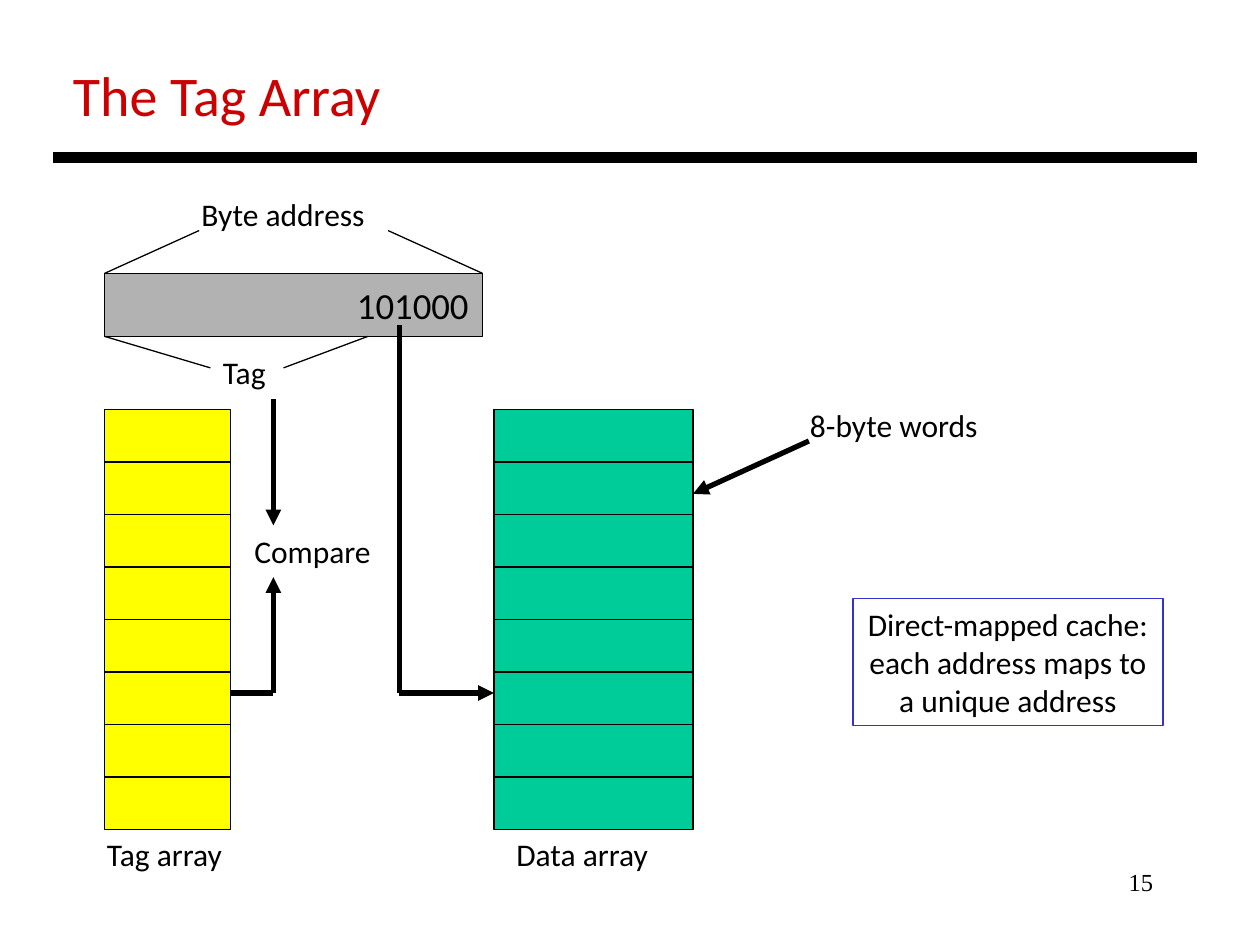
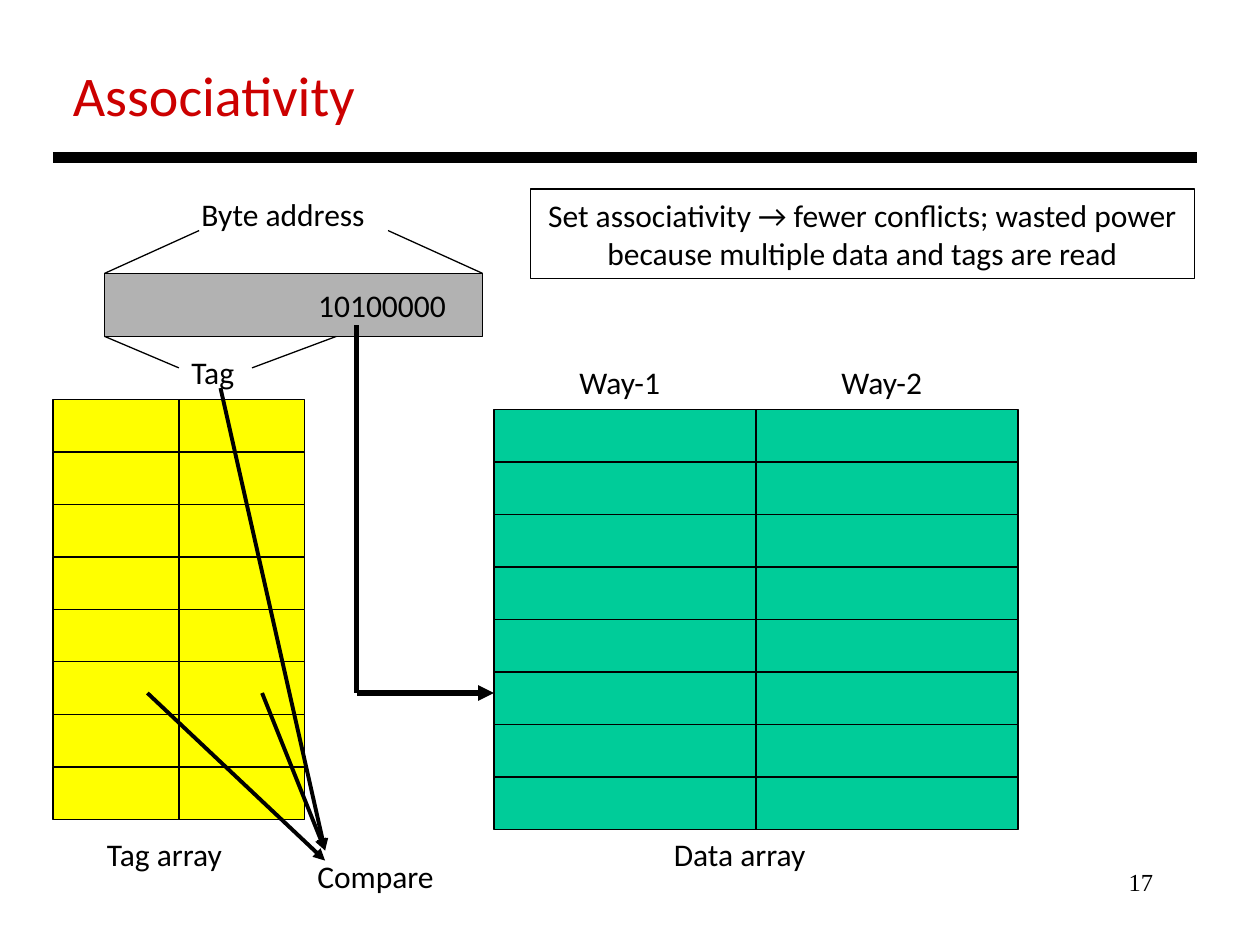
"""Build two slides on the tag array and associativity of a cache."""
import lxml.etree
import pptx
import pptx.dml.color
import pptx.enum.shapes
import pptx.enum.text
import pptx.oxml.ns
import pptx.util

Inches = pptx.util.Inches
Pt = pptx.util.Pt
Align = pptx.enum.text.PP_ALIGN
Fit = pptx.enum.text.MSO_AUTO_SIZE

BLACK, RED, BLUE = "000000", "CC0000", "3333CC"
GREEN, YELLOW, GREY = "00CC99", "FFFF00", "B2B2B2"
THIN, MEDIUM, THICK, RULE = 0.75, 2.25, 3, 6
ROWS, ROW_HEIGHT = 8, 5 / 12
DATA_LEFT, DATA_TOP = 3.92, 3.25
LOOKUP_Y = 5.5

TITLE_FONT = {"name": "Calibri", "size": Pt(32)}
LABEL_FONT = {"name": "Calibri", "size": Pt(18)}
ADDRESS_FONT = {"name": "Calibri", "size": Pt(21)}
NUMBER_FONT = {"name": "Times New Roman", "size": Pt(14)}
LABEL_FRAME = {"word_wrap": False, "auto_size": Fit.SHAPE_TO_FIT_TEXT}
WRAPPED_FRAME = {"word_wrap": True, "auto_size": Fit.NONE}


def rgb(hex_code):
    """Turn a hex string into a colour."""
    return pptx.dml.color.RGBColor.from_string(hex_code)


def set_all(target, values):
    """Set every attribute named in a dict of format values."""
    for name, value in values.items():
        setattr(target, name, value)


def write(box, text, font, color=BLACK, align=Align.LEFT, frame=LABEL_FRAME):
    """Write one paragraph per line of text into a box."""
    set_all(box.text_frame, frame)
    for index, line in enumerate(text.split("\n")):
        para = box.text_frame.paragraphs[0] if index == 0 else box.text_frame.add_paragraph()
        para.alignment = align
        span = para.add_run()
        span.text = line
        set_all(span.font, font)
        span.font.color.rgb = rgb(color)


def add_label(page, text, left, top, width, height=0.4, font=LABEL_FONT, **style):
    """Add a plain piece of text."""
    box = page.shapes.add_textbox(*map(Inches, (left, top, width, height)))
    write(box, text, font, **style)


def add_box(page, left, top, width, height, fill=None, outline=BLACK):
    """Add an outlined rectangle, filled when a colour is given."""
    box = page.shapes.add_shape(
        pptx.enum.shapes.MSO_SHAPE.RECTANGLE, *map(Inches, (left, top, width, height)))
    box.shadow.inherit = False
    if fill:
        box.fill.solid()
        box.fill.fore_color.rgb = rgb(fill)
    else:
        box.fill.background()
    box.line.color.rgb = rgb(outline)
    box.line.width = Pt(THIN)
    return box


def add_note(page, text, left, top, width, height, outline=BLACK):
    """Add a framed remark with centred lines."""
    box = add_box(page, left, top, width, height, outline=outline)
    write(box, text, LABEL_FONT, align=Align.CENTER)


def add_line(page, start, end, width=THIN, arrow=False):
    """Add a straight line, with an arrowhead at its end if asked."""
    line = page.shapes.add_connector(
        pptx.enum.shapes.MSO_CONNECTOR.STRAIGHT, *map(Inches, (*start, *end)))
    line.line.color.rgb = rgb(BLACK)
    line.line.width = Pt(width)
    if arrow:
        lxml.etree.SubElement(
            line.line._get_or_add_ln(), pptx.oxml.ns.qn("a:tailEnd"), type="triangle")
    lxml.etree.SubElement(line._element.spPr, pptx.oxml.ns.qn("a:effectLst"))


def add_array(page, left, top, cell_width, fill, ways=1):
    """Add a memory array with one column of cells per way."""
    for way in range(ways):
        for row in range(ROWS):
            add_box(page, left + way * cell_width, top + row * ROW_HEIGHT,
                    cell_width, ROW_HEIGHT, fill)


def add_address(page, bits, font, right_inset, tag_left, tag_end, index_x):
    """Add the byte address, its tag braces and the arrow into the data array."""
    left, right, top, bottom = 0.83, 3.83, 2.17, 2.67
    address = add_box(page, left, top, right - left, bottom - top, GREY)
    address.text_frame.margin_right = Inches(right_inset)
    write(address, bits, font, align=Align.RIGHT, frame=WRAPPED_FRAME)
    add_label(page, "Byte address", 1.5, 1.5, 1.51)
    add_label(page, "Tag", tag_left, 2.75, 0.55)
    add_line(page, (1.58, 1.83), (left, top))
    add_line(page, (3.08, 1.83), (right, top))
    add_line(page, (left, bottom), (tag_left, 2.92))
    add_line(page, (tag_end - 0.67, 2.92), (tag_end, bottom))
    add_line(page, (index_x, 2.58), (index_x, LOOKUP_Y), THICK)
    add_line(page, (index_x, LOOKUP_Y), (DATA_LEFT, LOOKUP_Y), THICK, arrow=True)


def add_page(deck, title, title_width, number):
    """Add a slide with its title, rule, number and tag array caption."""
    page = deck.slides.add_slide(deck.slide_layouts[6])
    add_label(page, str(number), 7.17, 6.83, 2.08, 0.5, NUMBER_FONT,
              align=Align.RIGHT, frame=WRAPPED_FRAME)
    add_label(page, title, 0.48, 0.43, title_width, 0.64, TITLE_FONT, color=RED)
    add_line(page, (0.42, 1.25), (9.5, 1.25), RULE)
    add_label(page, "Tag array", 0.75, 6.58, 1.12)
    return page


def build_tag_array(deck):
    """Build the slide on the direct-mapped cache."""
    page = add_page(deck, "The Tag Array", 2.67, 15)
    add_array(page, DATA_LEFT, DATA_TOP, 1.58, GREEN)
    add_array(page, 0.83, DATA_TOP, 1, YELLOW)
    add_address(page, "101000", ADDRESS_FONT, 0.11, 1.67, 2.92, 3.17)
    add_label(page, "8-byte words", 6.33, 3.17, 1.55)
    add_line(page, (6.42, 3.5), (5.5, 3.92), THICK, arrow=True)
    add_note(page, "Direct-mapped cache:\neach address maps to\na unique address",
             6.77, 4.75, 2.46, 1.01, BLUE)
    compare_x = 2.17
    add_line(page, (1.83, LOOKUP_Y), (compare_x, LOOKUP_Y), THICK)
    add_line(page, (compare_x, 3.17), (compare_x, 4.17), THICK, arrow=True)
    add_line(page, (compare_x, LOOKUP_Y), (compare_x, 4.58), THICK, arrow=True)
    add_label(page, "Compare", 1.92, 4.17, 1.14)
    add_label(page, "Data array", 4, 6.58, 1.26)


def build_associativity(deck):
    """Build the slide on the two-way cache."""
    page = add_page(deck, "Associativity", 2.47, 17)
    add_array(page, DATA_LEFT, DATA_TOP, 2.08, GREEN, ways=2)
    add_array(page, 0.42, 3.17, 1, YELLOW, ways=2)
    add_address(page, "10100000", LABEL_FONT, 0.29, 1.42, 2.67, 2.83)
    add_note(page, "Set associativity → fewer conflicts; wasted power\n"
             "because multiple data and tags are read", 4.21, 1.5, 5.27, 0.71)
    for way in range(2):
        add_label(page, f"Way-{way + 1}", 4.5 + way * 2.08, 2.83, 0.85)
    for start, end_y in (((1.17, 5.5), 6.83), ((2.08, 5.5), 6.75), ((1.75, 3.08), 6.75)):
        add_line(page, start, (2.58, end_y), MEDIUM, arrow=True)
    add_label(page, "Compare", 2.42, 6.75, 1.14)
    add_label(page, "Data array", 5.25, 6.58, 1.26)


def main():
    """Build the deck and save it."""
    deck = pptx.Presentation()
    set_all(deck, {"slide_width": Inches(10), "slide_height": Inches(7.5)})
    build_tag_array(deck)
    build_associativity(deck)
    deck.save("out.pptx")


if __name__ == "__main__":
    main()
